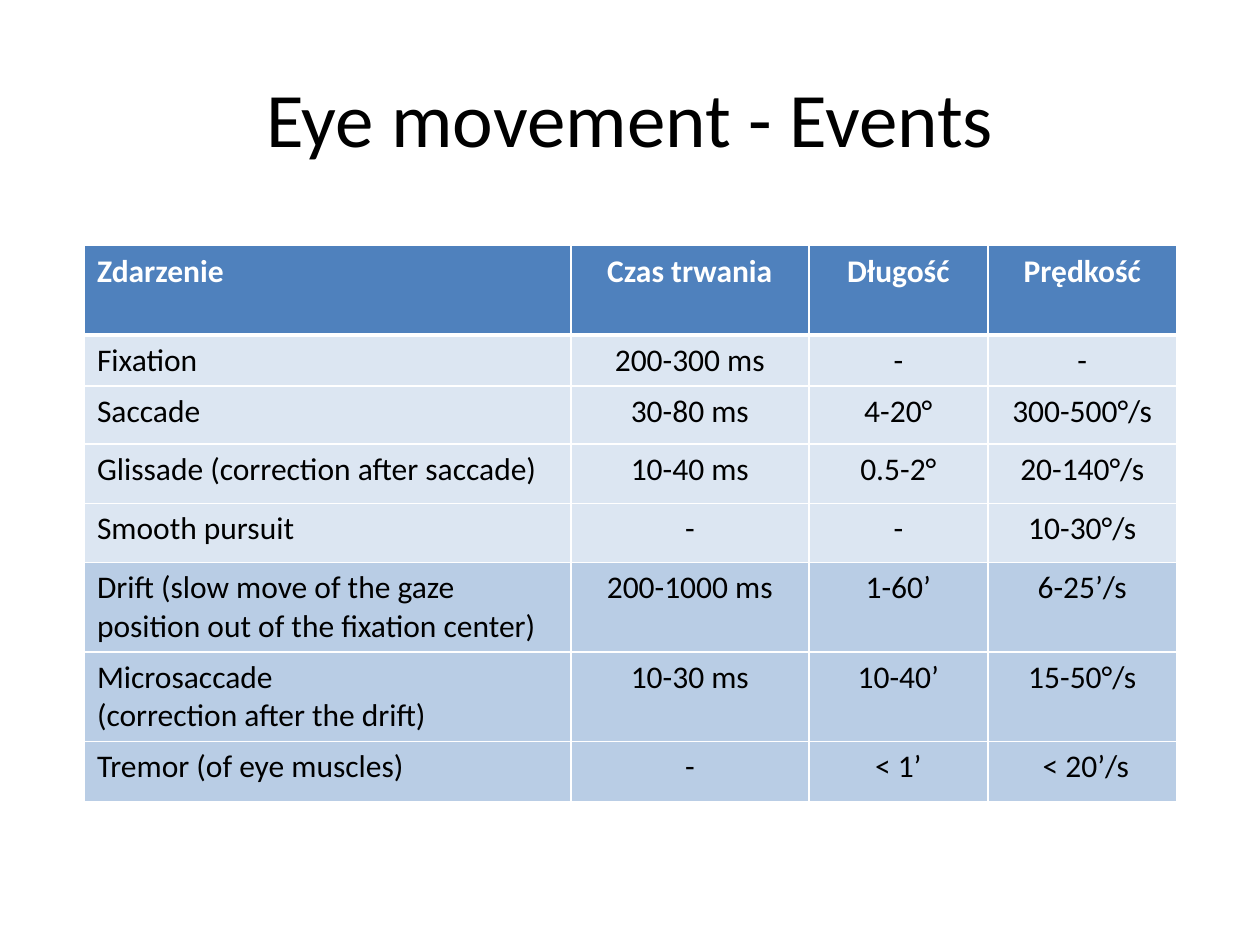
"""Builds a slide with a table of eye movement events."""
from lxml import etree
from pptx import Presentation
from pptx.dml.color import RGBColor
from pptx.enum.text import MSO_ANCHOR, PP_ALIGN
from pptx.oxml.ns import qn
from pptx.util import Inches, Pt

LEFT, CENTER = PP_ALIGN.LEFT, PP_ALIGN.CENTER
MIDDLE = MSO_ANCHOR.MIDDLE

TITLE = "Eye movement - Events"
HEAD = ("Zdarzenie", "Czas trwania", "Długość", "Prędkość")
LARGE = [
    ("Fixation", "200-300 ms", "-", "-"),
    ("Saccade", "30-80 ms", "4-20°", "300-500°/s"),
    ("Glissade (correction after saccade)", "10-40 ms", "0.5-2°", "20-140°/s"),
    ("Smooth pursuit", "-", "-", "10-30°/s"),
]
SMALL = [
    ("Drift (slow move of the gaze position out of the fixation center)",
     "200-1000 ms", "1-60’", "6-25’/s"),
    ("Microsaccade \n(correction after the drift)", "10-30 ms", "10-40’", "15-50°/s"),
    ("Tremor (of eye muscles)", "-", "< 1’", " < 20’/s"),
]
GROUPS = [([HEAD], "4F81BD"), (LARGE, "DCE6F2"), (SMALL, "B9CDE5")]
COLS = (3.86, 1.89, 1.42, 1.5)
ROWS = (0.71, 0.39, 0.46, 0.47, 0.47, 0.71, 0.71, 0.48)
FONT, BLACK, WHITE = "Calibri", "000000", "FFFFFF"


def color(code):
    return RGBColor.from_string(code)


def style(para, size, code, bold, align):
    para.alignment = align
    for run in para.runs:
        font = run.font
        font.name, font.size, font.bold = FONT, Pt(size), bold
        font.color.rgb = color(code)


def border(cell, row):
    props = cell._tc.get_or_add_tcPr()
    widths = {"lnL": 1, "lnR": 1, "lnT": 3 if row == 1 else 1,
              "lnB": 3 if row == 0 else 1}
    for side, width in widths.items():
        line = etree.SubElement(props, qn(f"a:{side}"), w=str(Pt(width)))
        fill = etree.SubElement(line, qn("a:solidFill"))
        etree.SubElement(fill, qn("a:srgbClr"), val=WHITE)


def add_title(slide):
    title = slide.shapes.title
    title.left, title.top = Inches(0.5), Inches(0.3)
    title.width, title.height = Inches(9), Inches(1.25)
    frame = title.text_frame
    frame.text = TITLE
    frame.vertical_anchor = MIDDLE
    style(frame.paragraphs[0], 44, BLACK, False, CENTER)


def add_events(slide):
    lines = [(words, fill) for group, fill in GROUPS for words in group]
    table = slide.shapes.add_table(
        len(ROWS), len(COLS), Inches(0.67), Inches(1.95),
        Inches(sum(COLS)), Inches(sum(ROWS))).table
    for col, width in zip(table.columns, COLS):
        col.width = Inches(width)
    for row, (words, fill) in enumerate(lines):
        table.rows[row].height = Inches(ROWS[row])
        for col, word in enumerate(words):
            cell = table.cell(row, col)
            border(cell, row)
            cell.fill.solid()
            cell.fill.fore_color.rgb = color(fill)
            para = cell.text_frame.paragraphs[0]
            para.text = word
            style(para, 18, BLACK if row else WHITE, row == 0,
                  CENTER if col else LEFT)


def main():
    deck = Presentation()
    deck.slide_width, deck.slide_height = Inches(10), Inches(7.5)
    slide = deck.slides.add_slide(deck.slide_layouts[5])
    add_title(slide)
    add_events(slide)
    deck.save("out.pptx")


if __name__ == "__main__":
    main()
